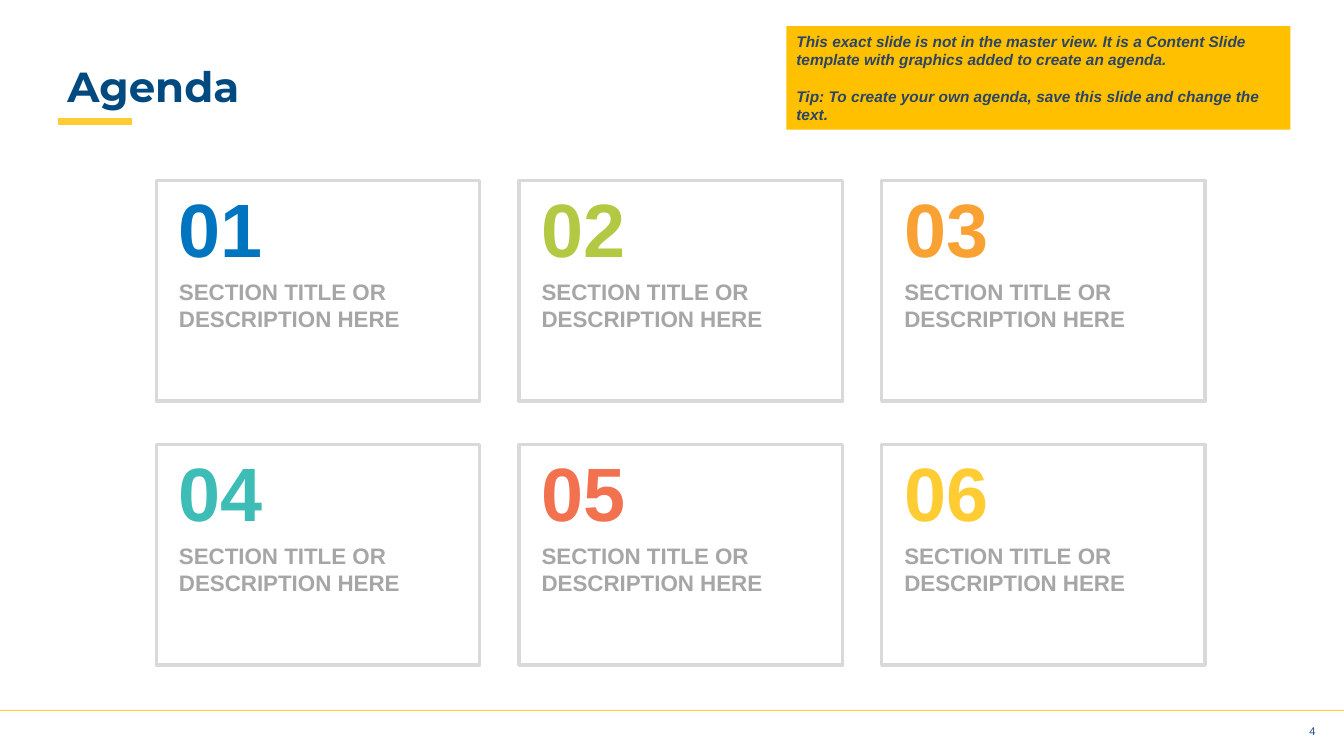
from lxml.etree import SubElement
from pptx import Presentation
from pptx.dml.color import RGBColor
from pptx.enum.shapes import MSO_CONNECTOR, MSO_SHAPE
from pptx.enum.text import MSO_ANCHOR, PP_ALIGN
from pptx.oxml.ns import qn
from pptx.util import Cm, Pt

NAVY = RGBColor(0x00, 0x4A, 0x80)
INK = RGBColor(0x2B, 0x45, 0x66)
PAGE_BLUE = RGBColor(0x26, 0x4B, 0x88)
YELLOW = RGBColor(0xFF, 0xCC, 0x33)
AMBER = RGBColor(0xFF, 0xC0, 0x00)
BORDER = RGBColor(0xD9, 0xD9, 0xD9)
GREY = RGBColor(0xA6, 0xA6, 0xA6)
BLUE = RGBColor(0x00, 0x75, 0xBF)
GREEN = RGBColor(0xB4, 0xC9, 0x43)
ORANGE = RGBColor(0xF9, 0xA1, 0x32)
TEAL = RGBColor(0x3D, 0xBD, 0xB6)
CORAL = RGBColor(0xF2, 0x72, 0x50)

NUMBER_COLOURS = [BLUE, GREEN, ORANGE, TEAL, CORAL, YELLOW]
COLUMNS = 3
SECTION_TEXT = "SECTION TITLE OR DESCRIPTION HERE"
NOTE_TEXTS = [
    "This exact slide is not in the master view. It is a Content Slide "
    "template with graphics added to create an agenda.",
    "Tip: To create your own agenda, save this slide and change the text.",
]


def add_span(para, text, size, colour, name="Arial", bold=True, italic=False):
    span = para.add_run()
    span.text = text
    span.font.name = name
    span.font.size = Pt(size)
    span.font.bold = bold
    span.font.italic = italic
    span.font.color.rgb = colour


def add_text_frame(page, left, top, width, height):
    frame = page.shapes.add_textbox(Cm(left), Cm(top), Cm(width), Cm(height)).text_frame
    frame.word_wrap = True
    return frame


def clear_margins(frame):
    frame.margin_left = frame.margin_top = frame.margin_right = frame.margin_bottom = 0


def add_rule(page, left, top, width, weight):
    rule = page.shapes.add_connector(
        MSO_CONNECTOR.STRAIGHT, Cm(left), Cm(top), Cm(left + width), Cm(top))
    rule.line.color.rgb = YELLOW
    rule.line.width = Pt(weight)
    SubElement(rule._element.spPr, qn("a:effectLst"))


def add_rectangle(page, left, top, width, height):
    box = page.shapes.add_shape(
        MSO_SHAPE.RECTANGLE, Cm(left), Cm(top), Cm(width), Cm(height))
    box.shadow.inherit = False
    return box


def add_footer(page, left, top, width):
    add_rule(page, left, top, width, 0.5)
    frame = add_text_frame(page, left + width - 0.87, top + 0.36, 0.79, 0.97)
    clear_margins(frame)
    add_span(frame.paragraphs[0], "4", 8, PAGE_BLUE, bold=False)


def add_title(page, left, top, width, height):
    add_rule(page, left, top + height + 0.23, 1.88, 5)
    frame = add_text_frame(page, left, top, width, height)
    clear_margins(frame)
    frame.margin_left = Cm(0.25)
    frame.vertical_anchor = MSO_ANCHOR.BOTTOM
    para = frame.paragraphs[0]
    para.line_spacing = 0.9
    add_span(para, "Agenda", 30, NAVY, name="Montserrat")


def add_card(page, left, top, width, height, number, colour):
    box = add_rectangle(page, left, top, width, height)
    box.fill.background()
    box.line.color.rgb = BORDER
    box.line.width = Pt(2.5)
    frame = add_text_frame(page, left + 0.32, top - 0.08, 5.59, 2.57)
    add_span(frame.paragraphs[0], f"{number:02}", 54, colour)
    frame = add_text_frame(page, left + 0.32, top + 2.34, 6.96, 1.63)
    add_span(frame.paragraphs[0], SECTION_TEXT, 16, GREY)


def add_agenda(page, left, top, width, height):
    card_width, card_height = 8.15, 5.56
    column_step = (width - card_width) / (COLUMNS - 1)
    row_step = height - card_height
    for index, colour in enumerate(NUMBER_COLOURS):
        row, column = divmod(index, COLUMNS)
        add_card(page, left + column * column_step, top + row * row_step,
                 card_width, card_height, index + 1, colour)


def add_note(page, left, top, width, height):
    box = add_rectangle(page, left, top, width, height)
    box.fill.solid()
    box.fill.fore_color.rgb = AMBER
    box.line.fill.background()
    frame = box.text_frame
    frame.word_wrap = True
    for index, text in enumerate(NOTE_TEXTS):
        para = frame.add_paragraph() if index else frame.paragraphs[0]
        para.alignment = PP_ALIGN.LEFT
        if index:
            para.space_before = Pt(13)
        add_span(para, text, 11, INK, italic=True)


def main():
    deck = Presentation()
    deck.slide_width, deck.slide_height = Cm(33.87), Cm(19.05)
    page = deck.slides.add_slide(deck.slide_layouts[6])
    add_footer(page, 0, 17.9, 33.87)
    add_title(page, 1.45, 1.02, 25.37, 1.8)
    add_agenda(page, 3.94, 4.55, 26.43, 12.21)
    add_note(page, 19.82, 0.66, 12.7, 2.61)
    deck.save("out.pptx")


if __name__ == "__main__":
    main()
